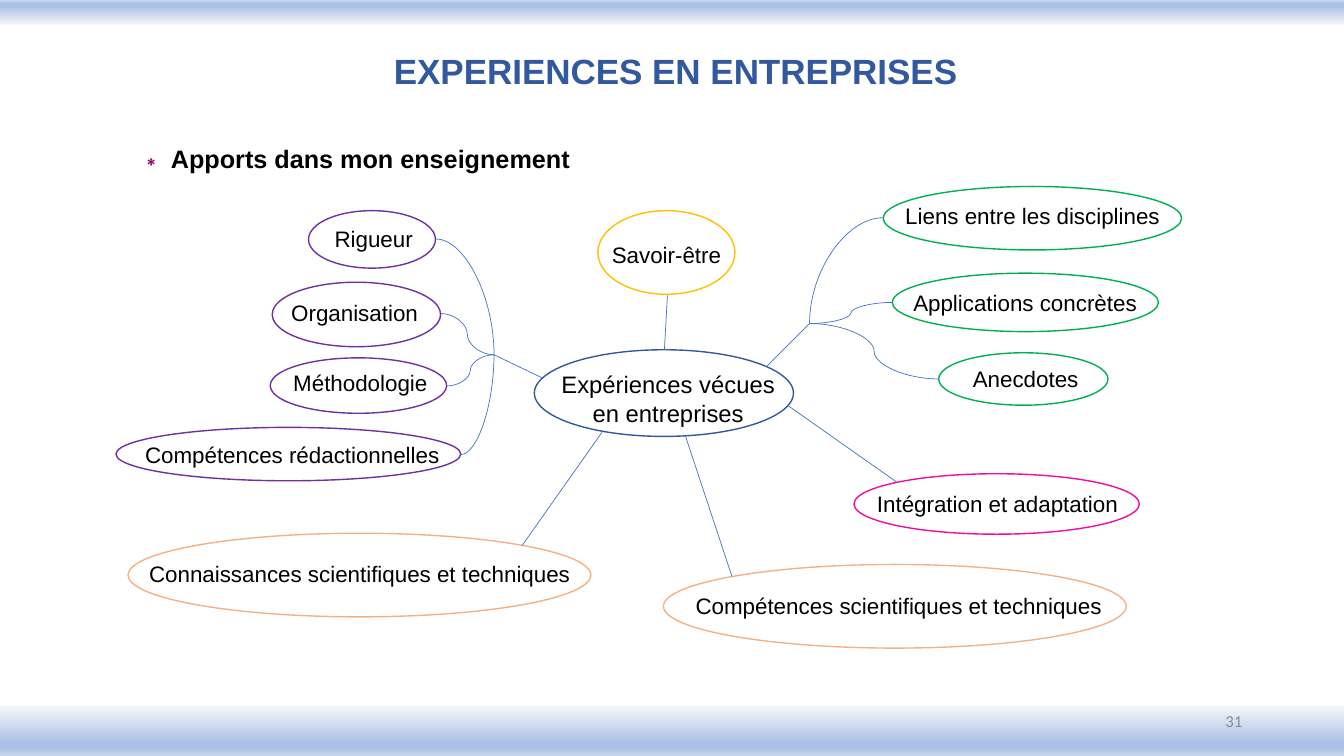
"""Mind map slide showing what company experience brings to teaching."""
from dataclasses import dataclass

from lxml import etree
from pptx import Presentation
from pptx.dml.color import RGBColor
from pptx.enum.shapes import MSO_CONNECTOR, MSO_SHAPE
from pptx.enum.text import MSO_ANCHOR, PP_ALIGN
from pptx.oxml.ns import qn
from pptx.util import Inches, Pt

ELLIPSE, RECTANGLE = MSO_SHAPE.OVAL, MSO_SHAPE.RECTANGLE
STRAIGHT, CURVE = MSO_CONNECTOR.STRAIGHT, MSO_CONNECTOR.CURVE
LEFT, CENTER, RIGHT = PP_ALIGN.LEFT, PP_ALIGN.CENTER, PP_ALIGN.RIGHT
TOP, MIDDLE = MSO_ANCHOR.TOP, MSO_ANCHOR.MIDDLE


@dataclass(frozen=True)
class Theme:
    """Colours, fonts, type sizes and line widths of the slide."""
    heading: str = "32599E"
    text: str = "000000"
    bullet: str = "880062"
    page: str = "8C8C8C"
    link: str = "4472C4"
    purple: str = "7030A0"
    green: str = "00B050"
    yellow: str = "FFC000"
    pink: str = "ED0DA2"
    orange: str = "F4B183"
    band: tuple = ((0, "F6F8FC"), (74, "ABC0E4"), (83, "ABC0E4"), (100, "C7D5ED"))
    font: str = "Arial"
    page_font: str = "Calibri"
    title_size: float = 25
    subtitle_size: float = 18
    center_size: float = 17
    label_size: float = 16
    page_size: float = 12
    outline_width: float = 1
    link_width: float = 0.5


THEME = Theme()
LABEL_HEIGHT = 0.37

NODES = [
    ("Rigueur", THEME.purple, (3.06, 2.09, 1.26, 0.57), (3.22, 2.18, 1.14)),
    ("Organisation", THEME.purple, (2.7, 2.8, 1.67, 0.64), (2.79, 2.92, 1.58)),
    ("Méthodologie", THEME.purple, (2.68, 3.55, 1.75, 0.55), (2.81, 3.61, 1.75)),
    ("Compétences rédactionnelles", THEME.purple, (1.15, 4.24, 3.42, 0.53), (1.34, 4.33, 3.19)),
    ("Savoir-être", THEME.yellow, (5.93, 2.09, 1.36, 0.83), (5.97, 2.34, 1.33)),
    ("Liens entre les disciplines", THEME.green, (8.76, 1.85, 2.96, 0.63), (8.88, 1.96, 2.84)),
    ("Applications concrètes", THEME.green, (8.85, 2.71, 2.64, 0.58), (8.96, 2.82, 2.53)),
    ("Anecdotes", THEME.green, (9.31, 3.5, 1.68, 0.52), (9.55, 3.57, 1.59)),
    ("Intégration et adaptation", THEME.pink, (8.47, 4.7, 2.83, 0.6), (8.6, 4.81, 2.84)),
    ("Connaissances scientifiques et techniques", THEME.orange,
     (1.27, 5.29, 4.59, 0.83), (1.38, 5.51, 4.59)),
    ("Compétences scientifiques et techniques", THEME.orange,
     (6.58, 5.6, 4.59, 0.83), (6.8, 5.83, 4.41)),
]

LEFT_HUB, RIGHT_HUB = (4.9, 3.52), (8.03, 3.21)

STRAIGHT_LINKS = [
    ((5.97, 4.29), (5.18, 5.41)),
    ((6.8, 4.33), (7.26, 5.72)),
    ((5.38, 3.75), LEFT_HUB),
    ((8.89, 4.78), (7.81, 4.02)),
    ((6.62, 2.93), (6.59, 3.47)),
    ((7.6, 3.64), RIGHT_HUB),
]

ARC_LINKS = [
    ((4.32, 2.37), LEFT_HUB),
    ((4.57, 4.51), LEFT_HUB),
    ((8.76, 2.16), RIGHT_HUB),
]

WAVE_LINKS = [
    ((4.37, 3.11), LEFT_HUB),
    ((4.43, 3.83), LEFT_HUB),
    ((8.85, 3.0), RIGHT_HUB),
    ((9.31, 3.76), RIGHT_HUB),
]


class MindMapSlide:
    """Draws the elements of the mind map on one slide."""

    def __init__(self, slide, theme):
        """Keep the slide and its theme."""
        self.slide = slide
        self.theme = theme

    def band(self, box, angle):
        """Add a gradient band along an edge of the slide."""
        shape = self.slide.shapes.add_shape(RECTANGLE, *map(Inches, box))
        shape.shadow.inherit = False
        shape.line.fill.background()
        shape.fill.gradient()
        shape.fill.gradient_angle = angle
        stops = shape._element.spPr.find(".//" + qn("a:gsLst"))
        for stop in list(stops):
            stops.remove(stop)
        for position, color in self.theme.band:
            stop = etree.SubElement(stops, qn("a:gs"), pos=str(position * 1000))
            etree.SubElement(stop, qn("a:srgbClr"), val=color)

    def text(self, box, lines, size, color=None, font=None, bold=False,
             alignments=(LEFT,), anchor=TOP, wrap=True):
        """Add a text box with one paragraph per line and return its frame."""
        frame = self.slide.shapes.add_textbox(*map(Inches, box)).text_frame
        frame.word_wrap = wrap
        frame.vertical_anchor = anchor
        frame.text = "\n".join(lines)
        for paragraph, alignment in zip(frame.paragraphs, alignments):
            paragraph.alignment = alignment
            paragraph.font.name = font or self.theme.font
            paragraph.font.size = Pt(size)
            paragraph.font.bold = bold
            paragraph.font.color.rgb = RGBColor.from_string(color or self.theme.text)
        return frame

    def subtitle(self, box, mark, wording):
        """Add the bold subtitle with its coloured mark."""
        frame = self.text(box, [mark], self.theme.subtitle_size, bold=True, alignments=(CENTER,))
        paragraph = frame.paragraphs[0]
        paragraph.runs[0].font.color.rgb = RGBColor.from_string(self.theme.bullet)
        paragraph.add_run().text = wording

    def ellipse(self, box, color):
        """Add an outlined ellipse."""
        shape = self.slide.shapes.add_shape(ELLIPSE, *map(Inches, box))
        shape.shadow.inherit = False
        shape.fill.background()
        shape.line.color.rgb = RGBColor.from_string(color)
        shape.line.width = Pt(self.theme.outline_width)

    def node(self, label, color, ellipse_box, label_box):
        """Add an ellipse and its label."""
        self.ellipse(ellipse_box, color)
        self.text((*label_box, LABEL_HEIGHT), [label], self.theme.label_size)

    def link(self, start, end, kind=STRAIGHT, geometry=None):
        """Add a thin connector, with another preset geometry if given."""
        connector = self.slide.shapes.add_connector(kind, *map(Inches, (*start, *end)))
        connector.line.color.rgb = RGBColor.from_string(self.theme.link)
        connector.line.width = Pt(self.theme.link_width)
        properties = connector._element.spPr
        etree.SubElement(properties, qn("a:effectLst"))
        if geometry:
            properties.find(qn("a:prstGeom")).set("prst", geometry)


def main():
    """Build the slide and save it."""
    presentation = Presentation()
    presentation.slide_width = Inches(13.33)
    presentation.slide_height = Inches(7.5)
    slide = presentation.slides.add_slide(presentation.slide_layouts[6])
    mind_map = MindMapSlide(slide, THEME)

    mind_map.band((0, 0, 13.33, 0.25), 90)
    mind_map.band((0, 6.99, 13.33, 0.51), 270)
    mind_map.text((2.88, 0.31, 7.64, 0.77), ["EXPERIENCES EN ENTREPRISES"], THEME.title_size,
                  THEME.heading, bold=True, alignments=(CENTER,), anchor=MIDDLE)
    mind_map.subtitle((0.67, 1.37, 5.69, 0.4), "∗ ", "Apports dans mon enseignement")
    mind_map.text((9.42, 6.95, 3, 0.4), ["31"], THEME.page_size, THEME.page,
                  THEME.page_font, alignments=(RIGHT,), anchor=MIDDLE)

    mind_map.ellipse((5.3, 3.47, 2.57, 0.86), THEME.heading)
    mind_map.text((5.47, 3.62, 2.34, 0.67), ["Expériences vécues", "en entreprises"],
                  THEME.center_size, alignments=(LEFT, CENTER), wrap=False)
    for node in NODES:
        mind_map.node(*node)

    for start, end in STRAIGHT_LINKS:
        mind_map.link(start, end)
    for start, end in ARC_LINKS:
        mind_map.link(start, end, CURVE, "curvedConnector2")
    for start, end in WAVE_LINKS:
        mind_map.link(start, end, CURVE)

    presentation.save("out.pptx")


if __name__ == "__main__":
    main()
